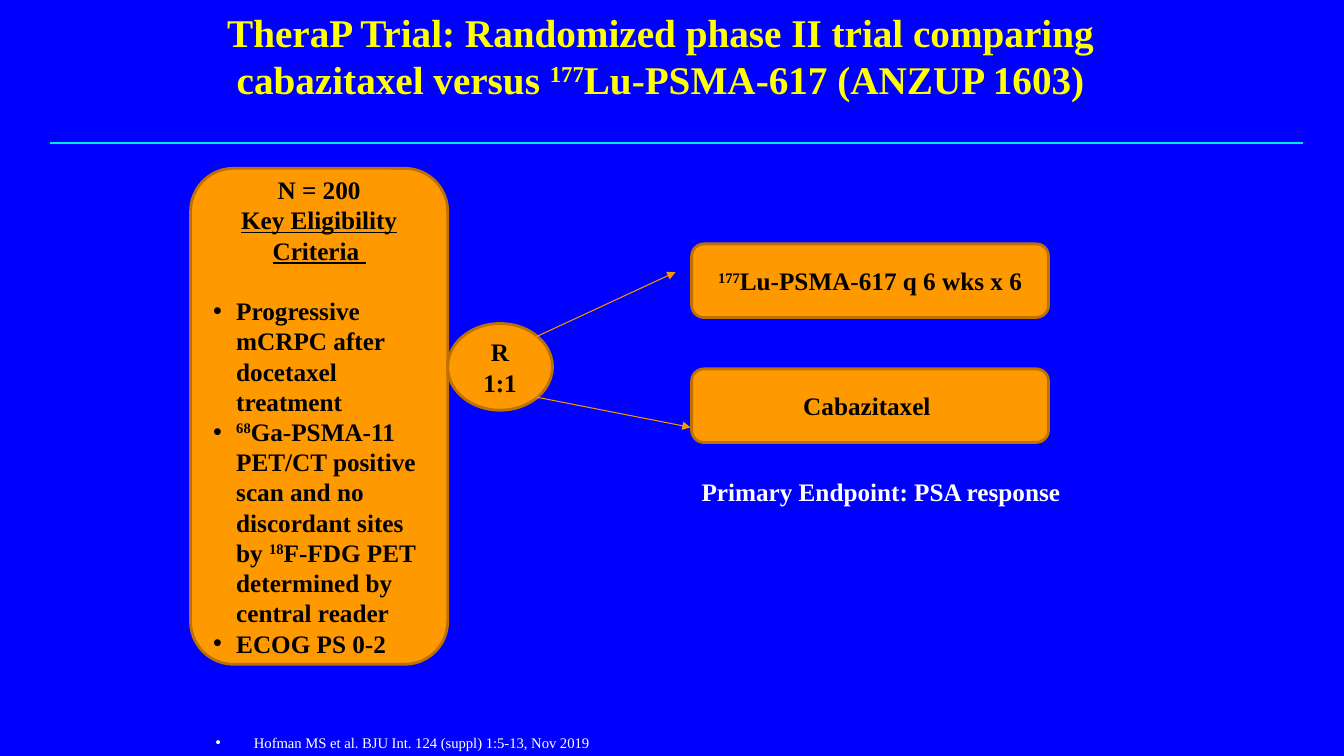
"""Build the TheraP trial design slide."""
import pptx
import pptx.dml.color
import pptx.enum.shapes
import pptx.enum.text
import pptx.oxml.ns
import pptx.util
import lxml.etree

PX = 9144
FONT = "Times New Roman"
BLUE, ORANGE, BROWN, AMBER = "0000FF", "FF9900", "BD7100", "F99600"
YELLOW, WHITE, BLACK, CYAN = "FFFF00", "FFFFFF", "000000", "00E7E7"
SHAPES = pptx.enum.shapes.MSO_SHAPE
ANCHOR = pptx.enum.text.MSO_ANCHOR
ALIGN = pptx.enum.text.PP_ALIGN


def px(*lengths):
    """Turn lengths in px into EMU."""
    return [pptx.util.Emu(length * PX) for length in lengths]


def color(value):
    """Turn a hex string into a colour."""
    return pptx.dml.color.RGBColor.from_string(value)


def add_element(parent, tag, **attributes):
    """Append a drawing element with the given attributes."""
    return lxml.etree.SubElement(parent, pptx.oxml.ns.qn(tag), attributes)


def write(para, text, size, ink, bold=True, underline=False, align=ALIGN.CENTER):
    """Write text in a paragraph, raising the parts between carets."""
    para.alignment = align
    for index, part in enumerate(text.split("^")):
        if not part:
            continue
        span = para.add_run()
        span.text = part
        span.font.name = FONT
        span.font.size = pptx.util.Pt(size)
        span.font.bold = bold
        span.font.underline = underline
        span.font.color.rgb = color(ink)
        if index % 2:
            span.font._element.set("baseline", "30000")


def add_bullet(para, indent):
    """Give a paragraph a hanging bullet."""
    properties = para._p.get_or_add_pPr()
    properties.set("marL", str(indent * PX))
    properties.set("indent", str(-indent * PX))
    add_element(properties, "a:buFont", typeface="Arial")
    add_element(properties, "a:buChar", char="•")


def add_text(page, box, anchor):
    """Add a wrapping text box and return its text frame."""
    frame = page.shapes.add_textbox(*px(*box)).text_frame
    frame.word_wrap = True
    frame.vertical_anchor = anchor
    return frame


def add_node(page, kind, box, text=""):
    """Add an outlined orange shape and return its text frame."""
    node = page.shapes.add_shape(kind, *px(*box))
    node.shadow.inherit = False
    node.fill.solid()
    node.fill.fore_color.rgb = color(ORANGE)
    node.line.color.rgb = color(BROWN)
    node.line.width = pptx.util.Pt(2)
    frame = node.text_frame
    frame.word_wrap = True
    frame.vertical_anchor = ANCHOR.MIDDLE
    write(frame.paragraphs[0], text, 18, BLACK)
    return frame


def add_line(page, ends, ink, width, arrow=False):
    """Draw a straight line, with an arrowhead at its end if asked."""
    line = page.shapes.add_connector(
        pptx.enum.shapes.MSO_CONNECTOR.STRAIGHT, *px(*ends))
    line.line.color.rgb = color(ink)
    line.line.width = pptx.util.Pt(width)
    if arrow:
        add_element(line.line._get_or_add_ln(), "a:tailEnd", type="triangle")
    add_element(line._element.spPr, "a:effectLst")


def add_header(page, box):
    """Place the title and the rule below it."""
    left, top, width, height = box
    add_line(page, (left, top + 142, left + width, top + 142), CYAN, 1.75)
    frame = add_text(page, (left + 139, top, 932, height), ANCHOR.MIDDLE)
    write(frame.paragraphs[0],
          "TheraP Trial: Randomized phase II trial comparing cabazitaxel "
          "versus ^177^Lu-PSMA-617 (ANZUP 1603)", 28, YELLOW)


def add_eligibility(page, box):
    """Place the panel of eligibility criteria."""
    frame = add_node(page, SHAPES.ROUNDED_RECTANGLE, box, "N = 200")
    write(frame.add_paragraph(), "Key Eligibility Criteria ", 18, BLACK,
          underline=True)
    criteria = (
        "Progressive mCRPC after docetaxel treatment",
        "^68^Ga-PSMA-11 PET/CT positive scan and no discordant sites by "
        "^18^F-FDG PET determined by central reader",
        "ECOG PS 0-2",
    )
    for index, criterion in enumerate(criteria):
        para = frame.add_paragraph()
        if index == 0:
            para.space_before = pptx.util.Pt(21.6)
        add_bullet(para, 23)
        write(para, criterion, 18, BLACK, align=ALIGN.LEFT)


def add_randomization(page, box):
    """Place the randomization node, its arrows, both arms and the endpoint."""
    left, top, width, height = box
    add_node(page, SHAPES.OVAL, (left, top + 79, 104, 86), "R 1:1")
    for start, end_x, end_y in ((92, 226, 28), (152, 241, 182)):
        add_line(page, (left + 88, top + start, left + end_x, top + end_y),
                 AMBER, 0.75, arrow=True)
    arm_left = left + 242
    for index, arm in enumerate(("^177^Lu-PSMA-617 q 6 wks x 6", "Cabazitaxel ")):
        add_node(page, SHAPES.ROUNDED_RECTANGLE,
                 (arm_left, top + index * 124, 354, 73), arm)
    frame = add_text(page, (arm_left, top + 226, width - 242, 40), ANCHOR.TOP)
    write(frame.paragraphs[0], "Primary Endpoint: PSA response", 18, WHITE,
          align=ALIGN.LEFT)


def add_citation(page, box):
    """Place the reference at the foot of the slide."""
    para = add_text(page, box, ANCHOR.BOTTOM).paragraphs[0]
    add_bullet(para, 38)
    write(para, "Hofman MS et al. BJU Int. 124 (suppl) 1:5-13, Nov 2019",
          10.5, WHITE, bold=False, align=ALIGN.LEFT)


def main():
    """Build and save the deck."""
    deck = pptx.Presentation()
    deck.slide_width, deck.slide_height = px(1333, 750)
    page = deck.slides.add_slide(deck.slide_layouts[6])
    page.background.fill.solid()
    page.background.fill.fore_color.rgb = color(BLUE)
    add_header(page, (50, 0, 1242, 109))
    add_citation(page, (204, 674, 932, 76))
    add_eligibility(page, (189, 167, 255, 492))
    add_randomization(page, (444, 242, 692, 266))
    deck.save("out.pptx")


if __name__ == "__main__":
    main()
